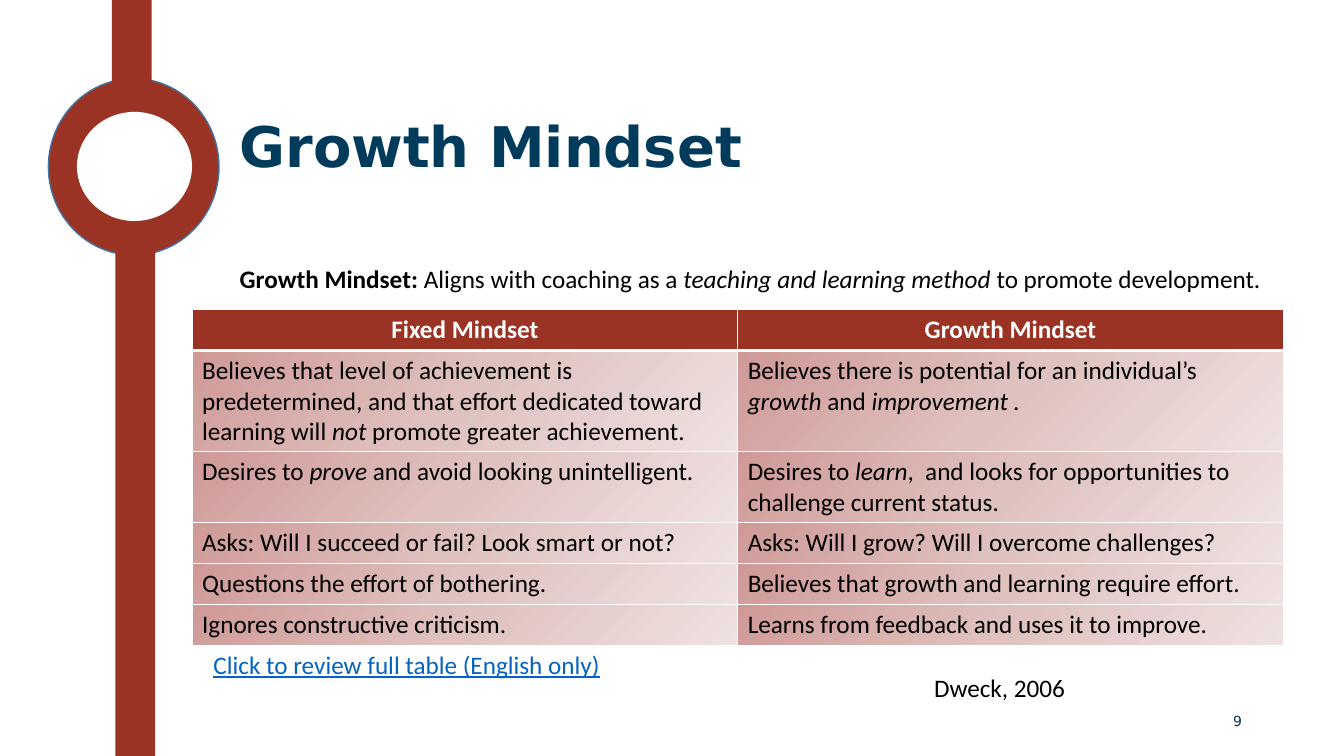
import pptx
import pptx.dml.color
import pptx.enum.shapes
import pptx.enum.text
import pptx.util
from dataclasses import dataclass
from lxml import etree
from pptx.oxml.ns import qn

Cm, Pt = pptx.util.Cm, pptx.util.Pt
Align = pptx.enum.text.PP_ALIGN
Anchor = pptx.enum.text.MSO_ANCHOR
Kind = pptx.enum.shapes.MSO_SHAPE


@dataclass(frozen=True)
class Theme:
    red: str = "9A3324"
    white: str = "FFFFFF"
    black: str = "000000"
    navy: str = "003B5C"
    page: str = "093152"
    link: str = "0563C1"
    ring: str = "43739E"
    fade: tuple = ((0, "CF9996"), (50, "DFC2C0"), (100, "EFE1E1"))
    head: str = "DejaVu Sans"
    body: str = "Calibri"
    big: int = 40
    text: int = 18
    small: int = 10


THEME = Theme()

ROWS = [
    ("Fixed Mindset", "Growth Mindset"),
    ("Believes that level of achievement is predetermined, and that effort "
     "dedicated toward learning will *not* promote greater achievement.",
     "Believes there is potential for an individual’s *growth* and *improvement .*"),
    ("Desires to *prove* and avoid looking unintelligent.",
     "Desires to *learn*,  and looks for opportunities to challenge current status."),
    ("Asks: Will I succeed or fail? Look smart or not?",
     "Asks: Will I grow? Will I overcome challenges?"),
    ("Questions the effort of bothering.",
     "Believes that growth and learning require effort."),
    ("Ignores constructive criticism.",
     "Learns from feedback and uses it to improve."),
]
HEIGHTS = [1.03, 2.51, 1.8, 1.03, 1.03, 1.03]


def rgb(code):
    return pptx.dml.color.RGBColor.from_string(code)


def write(para, text, size=THEME.text, face=THEME.body, color=THEME.black, bold=False):
    """Fill a paragraph; words between asterisks become italic."""
    for index, part in enumerate(text.split("*")):
        if part:
            run = para.add_run()
            run.text = part
            font = run.font
            font.size, font.name, font.bold = Pt(size), face, bold
            font.italic = index % 2 == 1
            font.color.rgb = rgb(color)
    return para


def add_box(slide, area, text, anchor=Anchor.TOP, **style):
    frame = slide.shapes.add_textbox(*map(Cm, area)).text_frame
    frame.word_wrap = True
    frame.vertical_anchor = anchor
    return write(frame.paragraphs[0], text, **style)


def add_form(slide, kind, area, fill, line=None):
    form = slide.shapes.add_shape(kind, *map(Cm, area))
    form.shadow.inherit = False
    form.fill.solid()
    form.fill.fore_color.rgb = rgb(fill)
    if line:
        form.line.color.rgb = rgb(line)
        form.line.width = Pt(1)
    else:
        form.line.fill.background()


def add_stop(parent, color):
    etree.SubElement(parent, qn("a:srgbClr"), val=color)


def edge_cell(cell, base):
    """Draw white borders, with the bottom one of the given width."""
    props = cell._tc.get_or_add_tcPr()
    for side, width in (("L", 1), ("R", 1), ("T", 1), ("B", base)):
        line = etree.SubElement(props, qn("a:ln" + side), w=str(Pt(width)))
        add_stop(etree.SubElement(line, qn("a:solidFill")), THEME.white)


def fade_cell(cell):
    """Fill a cell with a diagonal three-stop gradient."""
    grad = etree.SubElement(cell._tc.get_or_add_tcPr(), qn("a:gradFill"))
    stops = etree.SubElement(grad, qn("a:gsLst"))
    for place, color in THEME.fade:
        add_stop(etree.SubElement(stops, qn("a:gs"), pos=str(place * 1000)), color)
    etree.SubElement(grad, qn("a:lin"), ang=str(45 * 60000), scaled="0")


def add_grid(slide, left, top, width):
    count = len(ROWS[0])
    area = map(Cm, (left, top, width, sum(HEIGHTS)))
    table = slide.shapes.add_table(len(ROWS), count, *area).table
    for col in table.columns:
        col.width = Cm(width / count)
    for r, (row, height) in enumerate(zip(ROWS, HEIGHTS)):
        table.rows[r].height = Cm(height)
        for c, text in enumerate(row):
            cell = table.cell(r, c)
            para = cell.text_frame.paragraphs[0]
            edge_cell(cell, 3 if r == 0 else 1)
            if r == 0:
                cell.fill.solid()
                cell.fill.fore_color.rgb = rgb(THEME.red)
                write(para, text, color=THEME.white, bold=True).alignment = Align.CENTER
            else:
                fade_cell(cell)
                write(para, text)


def main():
    deck = pptx.Presentation()
    deck.slide_width, deck.slide_height = Cm(33.87), Cm(19.05)
    slide = deck.slides.add_slide(deck.slide_layouts[6])

    # Ring and stem on the left
    add_form(slide, Kind.OVAL, (1.22, 1.98, 4.3, 4.45), THEME.red, THEME.ring)
    add_form(slide, Kind.RECTANGLE, (2.91, 6.3, 1, 12.75), THEME.red)
    add_form(slide, Kind.RECTANGLE, (2.82, 0, 1, 2.08), THEME.red)
    add_form(slide, Kind.OVAL, (1.94, 2.82, 2.9, 2.75), THEME.white)

    # Title and lead line
    title = add_box(slide, (5.79, 2.06, 25.73, 3.43), "Growth Mindset", Anchor.MIDDLE,
                    size=THEME.big, face=THEME.head, color=THEME.navy, bold=True)
    title.line_spacing = 0.9
    lead = add_box(slide, (5.79, 6.5, 26.54, 1.02),
                   "Growth Mindset: **Aligns with coaching as a "
                   "*teaching and learning method *to promote development.")
    lead.runs[0].font.bold = True

    # Comparison table
    add_grid(slide, 4.84, 7.8, 27.5)

    # Link line, source and page number
    link = add_box(slide, (5.13, 16.23, 11.81, 1.02),
                   "Click to review full table (English only)", color=THEME.link)
    link.runs[0].font.underline = True
    add_box(slide, (23.29, 16.81, 7.44, 1.02), "Dweck, 2006")
    page = add_box(slide, (23.93, 17.65, 7.62, 1.02), "9", Anchor.MIDDLE,
                   size=THEME.small, face=THEME.head, color=THEME.page)
    page.alignment = Align.RIGHT

    deck.save("out.pptx")


if __name__ == "__main__":
    main()
